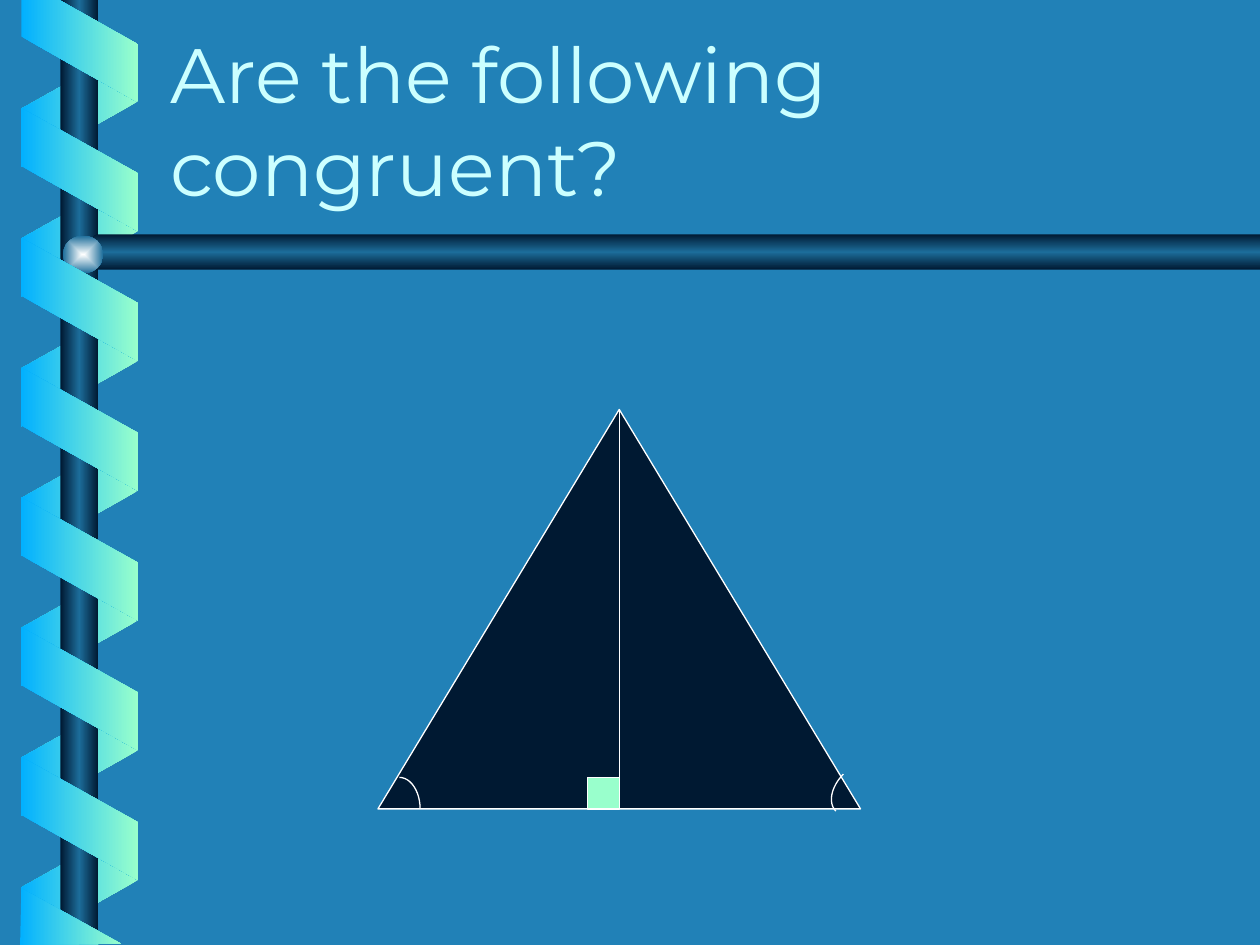
from lxml import etree
from pptx import Presentation
from pptx.dml.color import RGBColor
from pptx.enum import shapes as kinds, text as txt
from pptx.oxml import ns
from pptx.util import Inches, Pt

TITLE = "Are the following congruent?"
FONT = "Montserrat"
BACKGROUND = RGBColor(0x21, 0x81, 0xB7)
NAVY = RGBColor(0x00, 0x19, 0x32)
STEEL = RGBColor(0x1C, 0x6D, 0x9A)
SKY = RGBColor(0x01, 0xB0, 0xFF)
MINT = RGBColor(0x99, 0xFF, 0xCC)
ICE = RGBColor(0xCC, 0xFF, 0xFF)
WHITE = RGBColor(0xFF, 0xFF, 0xFF)
PEARL = RGBColor(0xFE, 0xFF, 0xFF)

BAR = [(0, NAVY), (50, STEEL), (100, NAVY)]
RIBBON = [(0, SKY), (100, MINT)]
RIBBON_BACK = [(0, MINT), (100, SKY)]
GLOW = [(0, PEARL), (100, STEEL)]

PITCH = 1.03
RIBBON_LEFT, RIBBON_SIZE, RIBBON_SLANT = 0.14, (0.98, 0.93), 0.56
BACK_TOP, BACK_COUNT = 0.37, 7
FRONT_TOP, FRONT_COUNT = 0.88, 6
RIBBON_ENDS = [
    [(0.17, 0), (0.17, 0.29), (1.09, 0.81), (1.09, 0.35), (0.47, 0)],
    [(0.96, 7.49), (0.17, 7.05), (0.16, 7.5)],
]
APEX, BASE, TRIANGLE_LEFT, TRIANGLE_WIDTH = 3.25, 6.42, 3, 3.83
MIDDLE = TRIANGLE_LEFT + TRIANGLE_WIDTH / 2
SQUARE = 0.25
ARC_WIDTH, ARC_HEIGHT = 0.33, 0.5
ANGLE_MARKS = [(3.17, BASE, 0), (6.81, 6.26, 225)]
KIND = kinds.MSO_SHAPE


def gradient(shape, stops, angle=0, radial=False):
    shape.fill.background()
    old = shape.element.spPr.find(ns.qn("a:noFill"))
    fill = etree.Element(ns.qn("a:gradFill"), rotWithShape="0")
    stop_list = etree.SubElement(fill, ns.qn("a:gsLst"))
    for position, colour in stops:
        stop = etree.SubElement(stop_list, ns.qn("a:gs"), pos=str(position * 1000))
        etree.SubElement(stop, ns.qn("a:srgbClr"), val=str(colour))
    if radial:
        center = etree.SubElement(fill, ns.qn("a:path"), path="shape")
        etree.SubElement(center, ns.qn("a:fillToRect"),
                         {side: "50000" for side in "ltrb"})
    else:
        etree.SubElement(fill, ns.qn("a:lin"), ang=str(angle * 60000), scaled="0")
    old.getparent().replace(old, fill)


def add_shape(page, kind, left, top, width, height, fill=None, line=None,
              rotation=0, flip=False, adjust=None):
    shape = page.shapes.add_shape(kind, Inches(left), Inches(top),
                                  Inches(width), Inches(height))
    shape.shadow.inherit = False
    shape.rotation = rotation
    if flip:
        shape.element.spPr.xfrm.set("flipH", "1")
    if adjust is not None:
        shape.adjustments[0] = adjust
    if fill is None:
        shape.fill.background()
    else:
        shape.fill.solid()
        shape.fill.fore_color.rgb = fill
    if line is None:
        shape.line.fill.background()
    else:
        shape.line.color.rgb = line
        shape.line.width = Pt(0.75)
    return shape


def add_ribbons(page, top, count, stops, **look):
    for index in range(count):
        ribbon = add_shape(page, KIND.PARALLELOGRAM, RIBBON_LEFT, top + index * PITCH,
                           *RIBBON_SIZE, adjust=RIBBON_SLANT, **look)
        gradient(ribbon, stops)


def add_ribbon_end(page, points):
    start, *others = [(Inches(x), Inches(y)) for x, y in points]
    builder = page.shapes.build_freeform(*start)
    builder.add_line_segments(others, close=True)
    end = builder.convert_to_shape()
    end.shadow.inherit = False
    end.line.fill.background()
    gradient(end, RIBBON)


def write(frame, words, size, colour, font=FONT, align=txt.PP_ALIGN.LEFT,
          anchor=txt.MSO_ANCHOR.BOTTOM):
    frame.word_wrap = True
    frame.auto_size = txt.MSO_AUTO_SIZE.NONE
    frame.vertical_anchor = anchor
    para = frame.paragraphs[0]
    para.alignment = align
    span = para.add_run()
    span.text = words
    span.font.size = Pt(size)
    span.font.name = font
    span.font.color.rgb = colour


def add_spiral(page):
    add_ribbons(page, BACK_TOP, BACK_COUNT, RIBBON_BACK, rotation=90, flip=True)
    gradient(add_shape(page, KIND.RECTANGLE, 0.48, 0, 0.3, 7.5), BAR)
    gradient(add_shape(page, KIND.PENTAGON, 0.6, 1.86, 9.4, 0.28, flip=True,
                       adjust=0.59), BAR, angle=90)
    gradient(add_shape(page, KIND.OVAL, 0.5, 1.87, 0.32, 0.3), GLOW, radial=True)
    add_ribbons(page, FRONT_TOP, FRONT_COUNT, RIBBON, rotation=270)
    for points in RIBBON_ENDS:
        add_ribbon_end(page, points)


def add_triangle(page):
    add_shape(page, KIND.ISOSCELES_TRIANGLE, TRIANGLE_LEFT, APEX, TRIANGLE_WIDTH,
              BASE - APEX, fill=NAVY, line=WHITE)
    altitude = page.shapes.add_connector(
        kinds.MSO_CONNECTOR.STRAIGHT, Inches(MIDDLE), Inches(APEX),
        Inches(MIDDLE), Inches(BASE))
    altitude.line.color.rgb = WHITE
    altitude.line.width = Pt(0.75)
    etree.SubElement(altitude.element.spPr, ns.qn("a:effectLst"))
    add_shape(page, KIND.RECTANGLE, MIDDLE - SQUARE, BASE - SQUARE, SQUARE, SQUARE,
              fill=MINT, line=WHITE)
    for x, y, rotation in ANGLE_MARKS:
        add_shape(page, KIND.ARC, x - ARC_WIDTH / 2, y - ARC_HEIGHT / 2,
                  ARC_WIDTH, ARC_HEIGHT, line=WHITE, rotation=rotation)


def main():
    deck = Presentation()
    deck.slide_width, deck.slide_height = Inches(10), Inches(7.5)
    page = deck.slides.add_slide(deck.slide_layouts[5])
    page.background.fill.solid()
    page.background.fill.fore_color.rgb = BACKGROUND
    add_spiral(page)
    title = page.shapes.title
    title.left, title.top = Inches(1.25), Inches(0.16)
    title.width, title.height = Inches(8.5), Inches(1.57)
    write(title.text_frame, TITLE, 44, ICE)
    add_triangle(page)
    deck.save("out.pptx")


if __name__ == "__main__":
    main()
